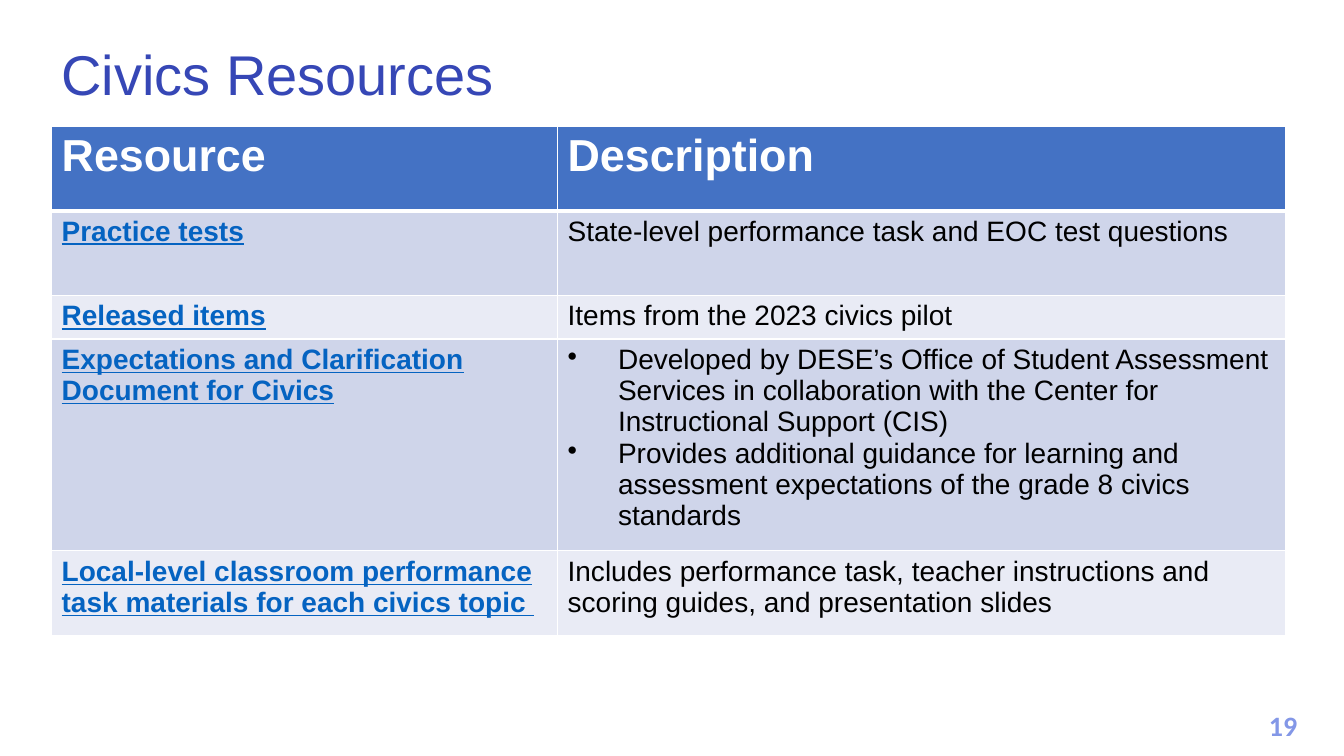
import pptx
import pptx.dml.color
import pptx.enum.text
import pptx.oxml
import pptx.oxml.ns
import pptx.util
from pptx.util import Cm

RGBColor = pptx.dml.color.RGBColor
TITLE_BLUE = RGBColor(0x36, 0x47, 0xB6)
NUMBER_BLUE = RGBColor(0x83, 0x97, 0xE7)
HEADER_BLUE = RGBColor(0x44, 0x72, 0xC4)
LINK_BLUE = RGBColor(0x05, 0x63, 0xC1)
BAND_DARK = RGBColor(0xCF, 0xD5, 0xEA)
BAND_LIGHT = RGBColor(0xE9, 0xEB, 0xF5)
WHITE = RGBColor(0xFF, 0xFF, 0xFF)
BLACK = RGBColor(0x00, 0x00, 0x00)

HEADINGS = ("Resource", "Description")
RESOURCES = [
    ("Practice tests", ["State-level performance task and EOC test questions"]),
    ("Released items", ["Items from the 2023 civics pilot"]),
    ("Expectations and Clarification Document for Civics", [
        "Developed by DESE’s Office of Student Assessment Services in "
        "collaboration with the Center for Instructional Support (CIS)",
        "Provides additional guidance for learning and assessment "
        "expectations of the grade 8 civics standards"]),
    ("Local-level classroom performance task materials for each civics topic ", [
        "Includes performance task, teacher instructions and scoring guides, "
        "and presentation slides"]),
]
COLUMN_SHARES = (0.41, 0.59)
ROW_HEIGHTS = (2.13, 2.13, 1.04, 4.98, 2.13)


def style_paragraph(paragraph, size, color, bold=False, underline=False, name="Arial"):
    for run in paragraph.runs:
        font = run.font
        font.name, font.size = name, pptx.util.Pt(size)
        font.bold, font.underline = bold, underline
        font.color.rgb = color


def add_bullet(paragraph):
    properties = paragraph._p.get_or_add_pPr()
    properties.set("marL", str(Cm(1.27)))
    properties.set("indent", str(-Cm(1.27)))
    bullet = pptx.oxml.parse_xml(
        f'<a:buChar {pptx.oxml.ns.nsdecls("a")} char="•"/>')
    properties.append(bullet)


def add_text(slide, box, text, anchor):
    shape = slide.shapes.add_textbox(*box)
    frame = shape.text_frame
    frame.word_wrap = True
    frame.vertical_anchor = anchor
    frame.text = text
    return frame.paragraphs[0]


def add_title(slide, box):
    paragraph = add_text(slide, box, "Civics Resources",
                         pptx.enum.text.MSO_ANCHOR.BOTTOM)
    paragraph.line_spacing = 0.9
    style_paragraph(paragraph, 40, TITLE_BLUE)


def add_page_number(slide, box):
    paragraph = add_text(slide, box, "19", pptx.enum.text.MSO_ANCHOR.TOP)
    paragraph.alignment = pptx.enum.text.PP_ALIGN.CENTER
    style_paragraph(paragraph, 20, NUMBER_BLUE, bold=True, name="Calibri")


def set_borders(cell, row_index):
    # The rule under the header is thicker than the others
    widths = {"L": 1, "R": 1, "T": 3 if row_index == 1 else 1,
              "B": 3 if row_index == 0 else 1}
    for side, width in widths.items():
        cell._tc.get_or_add_tcPr().append(pptx.oxml.parse_xml(
            f'<a:ln{side} {pptx.oxml.ns.nsdecls("a")} w="{pptx.util.Pt(width)}">'
            f'<a:solidFill><a:srgbClr val="{WHITE}"/></a:solidFill></a:ln{side}>'))


def fill_cell(cell, row_index, lines, color, **style):
    set_borders(cell, row_index)
    cell.fill.solid()
    if row_index == 0:
        cell.fill.fore_color.rgb = HEADER_BLUE
    else:
        cell.fill.fore_color.rgb = BAND_DARK if row_index % 2 else BAND_LIGHT
    cell.text_frame.text = "\n".join(lines)
    for paragraph in cell.text_frame.paragraphs:
        if len(lines) > 1:
            add_bullet(paragraph)
        style_paragraph(paragraph, 32 if row_index == 0 else 20, color, **style)


def add_resource_table(slide, box):
    left, top, width, height = box
    table = slide.shapes.add_table(len(ROW_HEIGHTS), len(HEADINGS),
                                   left, top, width, height).table
    for column, share in zip(table.columns, COLUMN_SHARES):
        column.width = int(width * share)
    for row, row_height in zip(table.rows, ROW_HEIGHTS):
        row.height = Cm(row_height)

    # Header row
    for column_index, heading in enumerate(HEADINGS):
        fill_cell(table.cell(0, column_index), 0, [heading], WHITE, bold=True)

    # One row for each resource
    for row_index, (resource, description) in enumerate(RESOURCES, start=1):
        fill_cell(table.cell(row_index, 0), row_index, [resource], LINK_BLUE,
                  bold=True, underline=True)
        fill_cell(table.cell(row_index, 1), row_index, description, BLACK)


def main():
    presentation = pptx.Presentation()
    presentation.slide_width, presentation.slide_height = Cm(33.87), Cm(19.05)
    slide = presentation.slides.add_slide(presentation.slide_layouts[6])
    add_page_number(slide, (Cm(31.55), Cm(17.73), Cm(1.57), Cm(1.12)))
    add_title(slide, (Cm(1.3), Cm(0.61), Cm(30.53), Cm(2.24)))
    add_resource_table(slide, (Cm(1.3), Cm(3.18), Cm(31.1), Cm(sum(ROW_HEIGHTS))))
    presentation.save("out.pptx")


if __name__ == "__main__":
    main()
